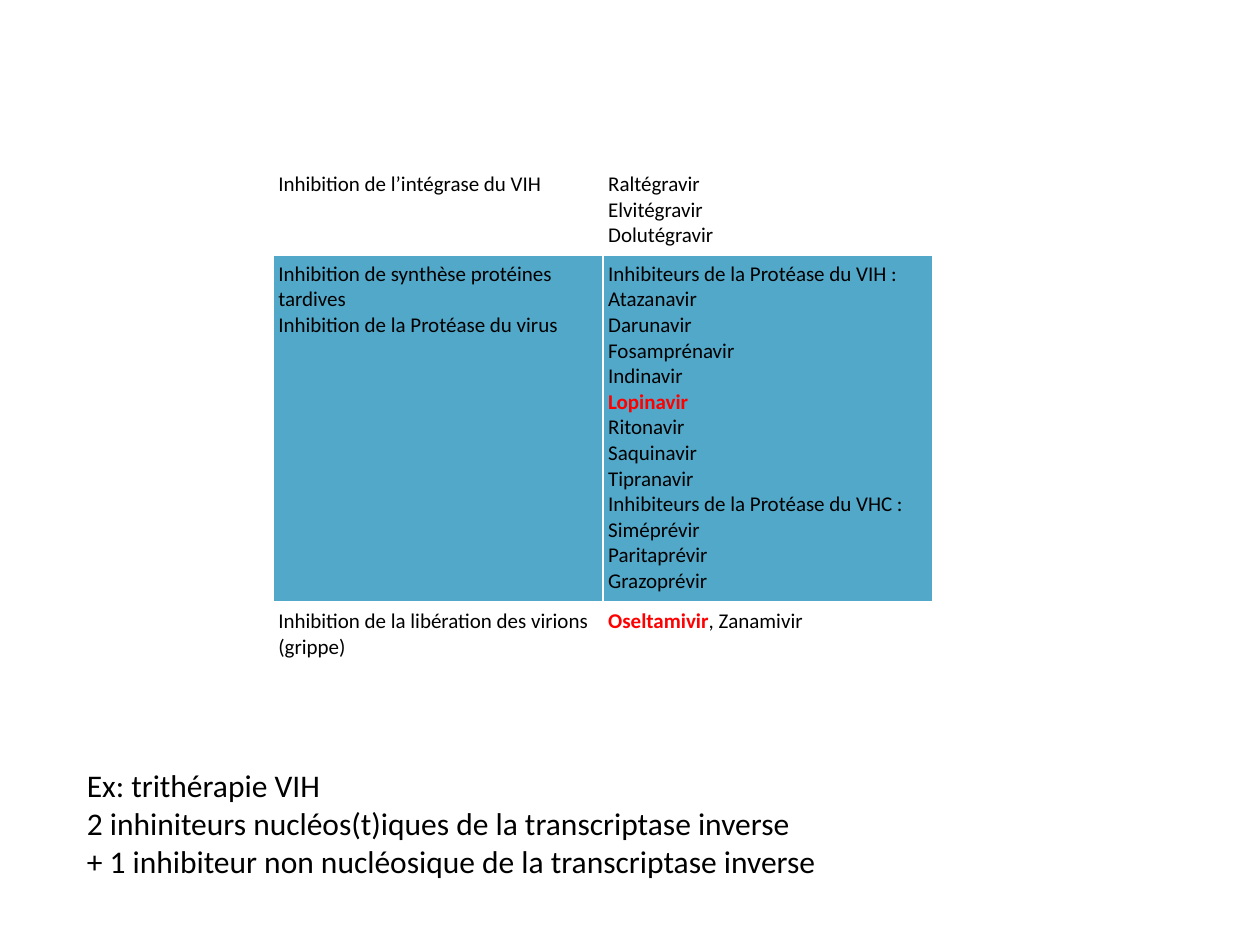
from dataclasses import dataclass

from pptx import Presentation
from pptx import util as u
from pptx.dml.color import RGBColor
from pptx.enum import text


@dataclass(frozen=True)
class Theme:
    font: str = "Calibri"
    table_size: int = 12
    example_size: int = 18
    ink: str = "000000"
    highlight: str = "FF0000"
    plain_row: str = "FFFFFF"
    shaded_row: str = "52A8C9"


THEME = Theme()

HIGHLIGHTED = {"Lopinavir", "Oseltamivir"}

# Each row: height in cm, fill, mechanism paragraphs, drug paragraphs
# A paragraph given as a tuple holds several runs
ROWS = [
    (1.8, THEME.plain_row,
     ["Inhibition de l’intégrase du VIH"],
     ["Raltégravir", "Elvitégravir", "Dolutégravir"]),
    (7, THEME.shaded_row,
     ["Inhibition de synthèse protéines tardives ",
      "Inhibition de la Protéase du virus"],
     ["Inhibiteurs de la Protéase du VIH :", "Atazanavir", "Darunavir",
      "Fosamprénavir", "Indinavir", "Lopinavir", "Ritonavir", "Saquinavir",
      "Tipranavir", "Inhibiteurs de la Protéase du VHC :", "Siméprévir",
      "Paritaprévir", "Grazoprévir"]),
    (1.16, THEME.plain_row,
     ["Inhibition de la libération des virions (grippe)"],
     [("Oseltamivir", ", Zanamivir")]),
]

EXAMPLE = [
    "Ex: trithérapie VIH",
    "2 inhiniteurs nucléos(t)iques de la transcriptase inverse",
    "+ 1 inhibiteur non nucléosique de la transcriptase inverse",
]


def write_paragraphs(text_frame, paragraphs, size):
    """Fill a text frame, with the highlighted drugs in bold red."""
    for index, content in enumerate(paragraphs):
        paragraph = text_frame.add_paragraph() if index else text_frame.paragraphs[0]
        parts = content if isinstance(content, tuple) else (content,)
        paragraph.text = parts[0]
        for part in parts[1:]:
            paragraph.add_run().text = part
        for run in paragraph.runs:
            marked = run.text in HIGHLIGHTED
            run.font.name = THEME.font
            run.font.size = u.Pt(size)
            run.font.bold = marked
            run.font.color.rgb = RGBColor.from_string(
                THEME.highlight if marked else THEME.ink)


def fill_cell(cell, paragraphs, fill):
    cell.margin_left = cell.margin_right = u.Cm(0.1)
    cell.margin_top = cell.margin_bottom = u.Cm(0.13)
    cell.fill.solid()
    cell.fill.fore_color.rgb = RGBColor.from_string(fill)
    write_paragraphs(cell.text_frame, paragraphs, THEME.table_size)


def add_drug_table(slide):
    column_width = 6.65
    height = sum(row[0] for row in ROWS)
    table = slide.shapes.add_table(
        len(ROWS), 2, u.Cm(5.51), u.Cm(3.33),
        u.Cm(2 * column_width), u.Cm(height)).table
    table.first_row = table.horz_banding = False
    for row, (row_height, fill, *columns) in zip(table.rows, ROWS):
        row.height = u.Cm(row_height)
        for cell, paragraphs in zip(row.cells, columns):
            fill_cell(cell, paragraphs, fill)


def add_example(slide):
    shape = slide.shapes.add_textbox(u.Cm(1.5), u.Cm(15.32), u.Cm(22.8), u.Cm(2.56))
    text_frame = shape.text_frame
    text_frame.word_wrap = True
    text_frame.auto_size = text.MSO_AUTO_SIZE.SHAPE_TO_FIT_TEXT
    write_paragraphs(text_frame, EXAMPLE, THEME.example_size)


def main():
    presentation = Presentation()
    presentation.slide_width = u.Cm(25.4)
    presentation.slide_height = u.Cm(19.05)
    slide = presentation.slides.add_slide(presentation.slide_layouts[6])

    # Antiviral mechanisms and drugs
    add_drug_table(slide)

    # Treatment example below the table
    add_example(slide)

    presentation.save("out.pptx")


if __name__ == "__main__":
    main()
